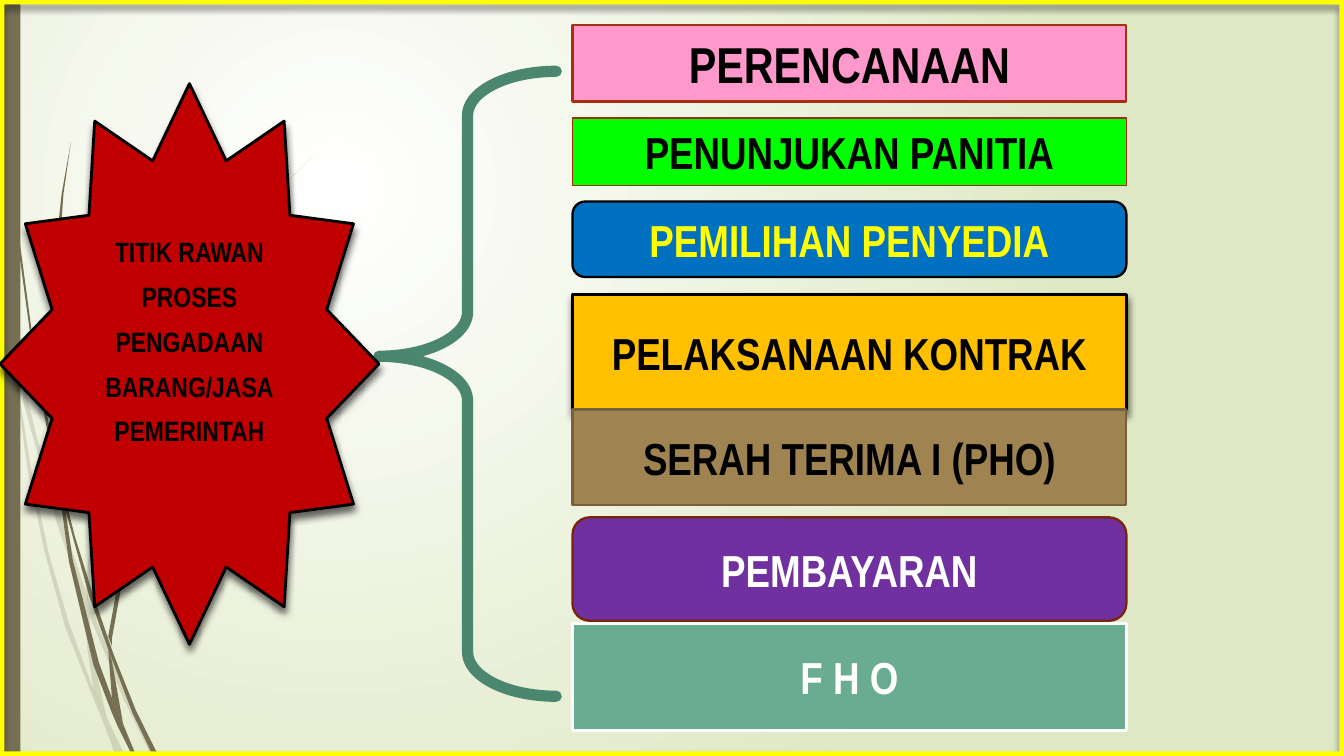
from dataclasses import dataclass
from typing import Optional

from lxml.etree import SubElement as Sub
from pptx import Presentation as Deck
from pptx.dml.color import RGBColor as Rgb
from pptx.enum.shapes import MSO_SHAPE as Kind
from pptx.enum.text import MSO_ANCHOR as Anchor, PP_ALIGN as Align
from pptx.oxml.ns import qn
from pptx.util import Pt

WIDE, HIGH = 720, 405


@dataclass(frozen=True)
class Theme:
    font: str = "Arial Narrow"
    head: float = 27
    body: float = 24
    small: float = 15
    black: str = "000000"
    white: str = "FFFFFF"
    yellow: str = "FFFF00"
    olive: str = "766F54"
    sage: str = "DFE8C4"
    brace: str = "4B866E"
    star: str = "C00000"


@dataclass(frozen=True)
class Box:
    kind: Kind
    left: float
    top: float
    wide: float
    high: float
    fill: Optional[str] = None
    line: Optional[str] = None
    thick: float = 0
    lines: tuple = ()
    size: float = 0
    ink: str = ""
    shade: bool = False
    adj: tuple = ()


@dataclass(frozen=True)
class Blade:
    """Closed outline of one grass blade; alpha in percent."""
    dots: tuple
    alpha: int = 100


T = Theme()

BLADES = (
    Blade(((0, 152), (4, 174), (6, 189), (9, 203), (17, 253), (26, 296), (37, 334),
           (50, 369), (57, 384), (67, 405), (62, 405), (55, 386), (50, 374),
           (35, 336), (24, 296), (15, 253), (6, 189), (0, 161)), 20),
    Blade(((8, 186), (9, 203), (31, 282), (45, 323), (48, 330), (66, 374), (81, 405),
           (84, 405), (68, 374), (50, 328), (46, 317), (34, 281), (20, 235)), 20),
    Blade(((47, 322), (48, 315), (51, 282), (60, 250), (86, 188), (123, 132),
           (145, 107), (168, 83), (145, 106), (123, 132), (85, 188), (58, 249),
           (49, 281), (46, 315)), 20),
    Blade(((45, 323), (47, 349), (50, 369), (52, 374), (57, 384), (49, 348),
           (48, 330)), 20),
    Blade(((1, 0), (2, 26), (4, 59), (9, 126), (18, 192), (31, 260), (30, 245),
           (19, 192), (10, 125), (4, 59), (2, 26), (2, 0))),
    Blade(((31, 258), (37, 301), (50, 356), (60, 382), (63, 389), (71, 405), (73, 405),
           (66, 388), (60, 374), (53, 355), (39, 300), (35, 273), (32, 255))),
    Blade(((32, 255), (35, 273), (48, 320), (58, 348), (71, 382), (82, 405), (85, 405),
           (73, 381), (61, 351), (50, 319), (40, 287))),
    Blade(((38, 76), (33, 104), (30, 132), (28, 189), (30, 243), (32, 255), (32, 245),
           (29, 189), (32, 132), (34, 104))),
    Blade(((60, 342), (68, 298), (86, 257), (110, 220), (125, 202), (141, 186),
           (132, 194), (110, 219), (84, 256), (66, 297), (58, 341), (60, 346))),
    Blade(((58, 348), (60, 374), (66, 388), (60, 354))),
)


def step(kind: Kind, top: float, high: float, text: str, fill: str, line: str,
         thick: float, ink: str = T.black, size: float = T.body, shade: bool = False) -> Box:
    """One bar of the right-hand column."""
    return Box(kind, 306.7, top, 296.7, high, fill, line, thick, (text,), size, ink, shade)


FRAME = (
    Box(Kind.RECTANGLE, 0, 0, 11, HIGH, T.olive),
    Box(Kind.FRAME, 0, 0, WIDE, HIGH, T.yellow, shade=True, adj=(0.006,)),
)
RECT, ROUND = Kind.RECTANGLE, Kind.ROUNDED_RECTANGLE
STEPS = (
    step(RECT, 13.5, 41, "PERENCANAAN", "FF99CC", "A53010", 1.25, size=T.head),
    step(RECT, 63.3, 36, "PENUNJUKAN PANITIA", "00FF00", "9E2E0F", 0.75),
    step(ROUND, 108, 40.4, "PEMILIHAN PENYEDIA", "0070C0", T.black, 1.25, T.yellow),
    step(RECT, 157.6, 62, "PELAKSANAAN KONTRAK", "FFC000", T.black, 1.5, shade=True),
    step(RECT, 219.4, 51, "SERAH TERIMA I (PHO)", "9F8351", "76613C", 1.25),
    step(ROUND, 277.2, 55.4, "PEMBAYARAN", "7030A0", "7A240C", 1.25, T.white),
    step(RECT, 334.2, 57, "F H O", "6AAC91", T.white, 1.75, T.white),
)
BRACE = Box(Kind.LEFT_BRACE, 203, 38.2, 95, 334.8, None, T.brace, 6, adj=(0.25, 0.456))
STAR = Box(Kind.STAR_12_POINT, 0, 44.8, 203, 300.4, T.star, T.black, 1.5,
           ("TITIK RAWAN", "PROSES", "PENGADAAN", "BARANG/JASA", "PEMERINTAH"),
           T.small, T.black, True)


def apply(item: object, fmt: dict) -> None:
    for name, value in fmt.items():
        setattr(item, name, value)


def cast(shape) -> None:
    """Add a soft shadow straight below the shape."""
    fx = shape._element.spPr.find(qn("a:effectLst"))
    drop = Sub(fx, qn("a:outerShdw"), blurRad=str(Pt(4)), dist=str(Pt(3)),
               dir="5400000", algn="ctr", rotWithShape="0")
    tint = Sub(drop, qn("a:srgbClr"), val=T.black)
    Sub(tint, qn("a:alpha"), val="60000")


def paint(shape, fill: Optional[str], line: Optional[str], thick: float) -> None:
    shape.shadow.inherit = False
    if fill:
        shape.fill.solid()
        shape.fill.fore_color.rgb = Rgb.from_string(fill)
    else:
        shape.fill.background()
    if line:
        shape.line.color.rgb = Rgb.from_string(line)
        shape.line.width = Pt(thick)
    else:
        shape.line.fill.background()


def write(shape, box: Box) -> None:
    frame = shape.text_frame
    apply(frame, {"word_wrap": True, "vertical_anchor": Anchor.MIDDLE})
    many = len(box.lines) > 1
    if many:
        frame.margin_bottom = Pt(28)
    for i, text in enumerate(box.lines):
        para = frame.add_paragraph() if i else frame.paragraphs[0]
        apply(para, {"alignment": Align.CENTER, "space_before": Pt(6 if many else 0)})
        run = para.add_run()
        run.text = text
        apply(run.font, {"name": T.font, "size": Pt(box.size), "bold": True})
        run.font.color.rgb = Rgb.from_string(box.ink)


def draw(slide, box: Box):
    shape = slide.shapes.add_shape(
        box.kind, Pt(box.left), Pt(box.top), Pt(box.wide), Pt(box.high))
    for i, value in enumerate(box.adj):
        shape.adjustments[i] = value
    paint(shape, box.fill, box.line, box.thick)
    if box.shade:
        cast(shape)
    if box.lines:
        write(shape, box)
    return shape


def grow(slide, blade: Blade) -> None:
    """Draw one grass blade."""
    pen = slide.shapes.build_freeform(*blade.dots[0], scale=Pt(1))
    pen.add_line_segments(blade.dots[1:], close=True)
    shape = pen.convert_to_shape()
    paint(shape, T.olive, None, 0)
    if blade.alpha < 100:
        tint = shape._element.spPr.find(qn("a:solidFill"))[0]
        Sub(tint, qn("a:alpha"), val=str(blade.alpha * 1000))


def glow(slide) -> None:
    """Fill the background with a radial gradient."""
    fill = slide.background.fill
    fill.gradient()
    for stop, place, tone in zip(fill.gradient_stops, (0, 1), (T.white, T.sage)):
        stop.position = place
        stop.color.rgb = Rgb.from_string(tone)
    grad = slide._element.find(".//" + qn("a:gradFill"))
    grad.remove(grad.find(qn("a:lin")))
    ring = Sub(grad, qn("a:path"), attrib={"path": "circle"})
    Sub(ring, qn("a:fillToRect"), l="50000", t="50000", r="100000", b="100000")


def main() -> None:
    deck = Deck()
    apply(deck, {"slide_width": Pt(WIDE), "slide_height": Pt(HIGH)})
    slide = deck.slides.add_slide(deck.slide_layouts[6])
    glow(slide)
    for blade in BLADES:
        grow(slide, blade)
    for box in FRAME + STEPS:
        draw(slide, box)
    brace = draw(slide, BRACE)
    brace.line._get_or_add_ln().set("cap", "rnd")
    draw(slide, STAR)
    deck.save("out.pptx")


if __name__ == "__main__":
    main()
